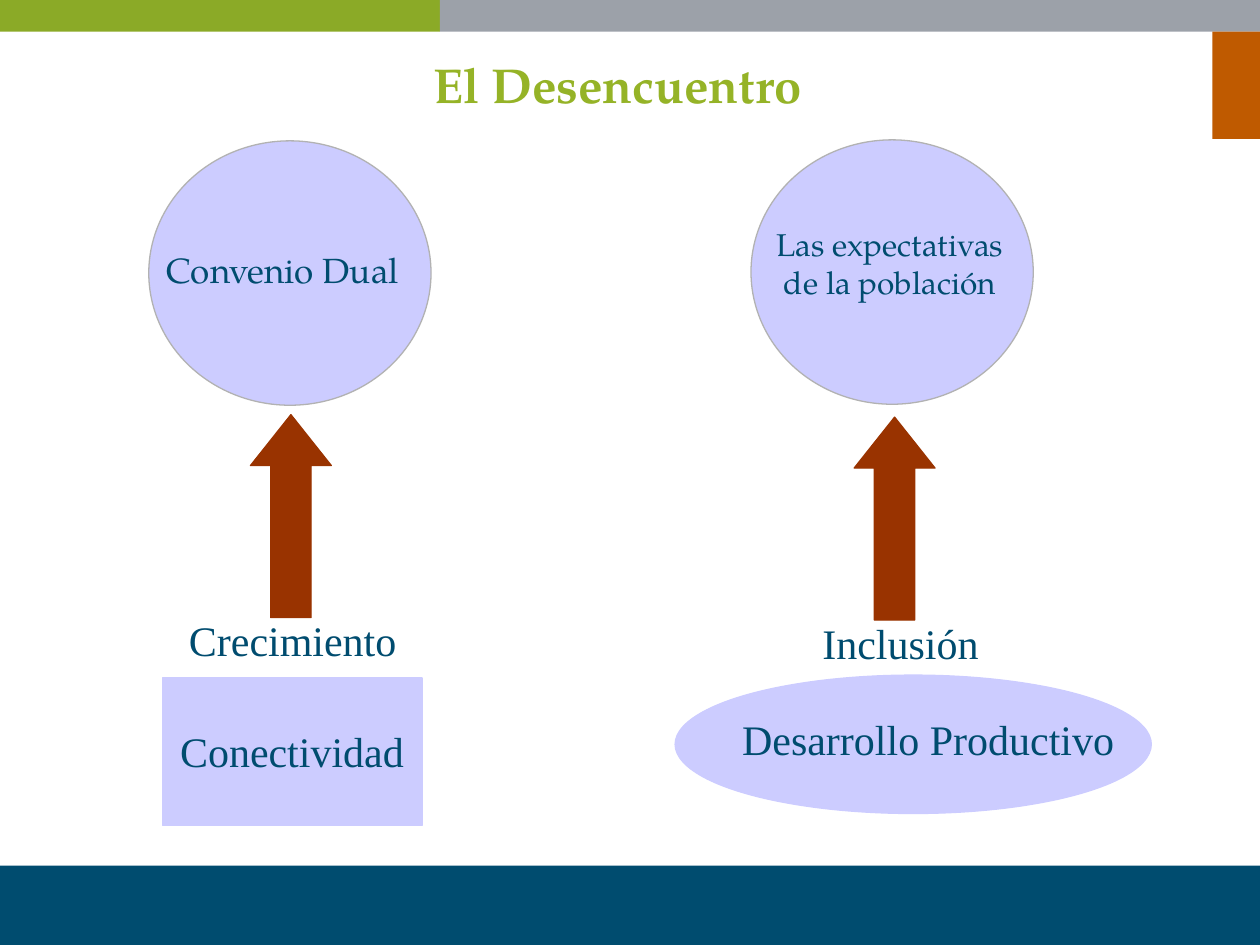
from pptx import Presentation
from pptx.dml.color import RGBColor
from pptx.enum import shapes as sh, text as t
from pptx.util import Cm, Pt

GREEN = RGBColor(0x8B, 0xAA, 0x27)
TITLE_GREEN = RGBColor(0x95, 0xB3, 0x27)
GREY = RGBColor(0x9C, 0xA1, 0xA9)
ORANGE = RGBColor(0xBF, 0x5A, 0x00)
NAVY = RGBColor(0x00, 0x4C, 0x6F)
LILAC = RGBColor(0xCC, 0xCC, 0xFF)
OUTLINE = RGBColor(0xB2, 0xB2, 0xB2)
BROWN = RGBColor(0x99, 0x33, 0x00)
SERIF = "TeX Gyre Pagella"
TIMES = "Times New Roman"
RECT = sh.MSO_SHAPE.RECTANGLE
OVAL = sh.MSO_SHAPE.OVAL
LEFT, CENTER = t.PP_ALIGN.LEFT, t.PP_ALIGN.CENTER


def add_shape(parent, kind, box, fill, line=None):
    sp = parent.shapes.add_shape(kind, *map(Cm, box))
    sp.shadow.inherit = False
    sp.fill.solid()
    sp.fill.fore_color.rgb = fill
    if line is None:
        sp.line.fill.background()
    else:
        sp.line.color.rgb = line
        sp.line.width = Pt(0.75)
    return sp


def write(sp, lines, font, size, color=NAVY, align=LEFT, wrap=True, bold=False):
    tf = sp.text_frame
    tf.text = "\n".join(lines)
    tf.word_wrap = wrap
    tf.auto_size = t.MSO_AUTO_SIZE.SHAPE_TO_FIT_TEXT
    tf.vertical_anchor = t.MSO_ANCHOR.TOP
    for p in tf.paragraphs:
        p.alignment = align
        p.font.name = font
        p.font.size = Pt(size)
        p.font.bold = bold
        p.font.color.rgb = color


def add_text(parent, box, lines, font=TIMES, size=24, **style):
    write(parent.shapes.add_textbox(*map(Cm, box)), lines, font, size, **style)


def add_title(s, title):
    sp = s.shapes.title
    sp.left, sp.top, sp.width, sp.height = Cm(5.64), Cm(0.97), Cm(13.61), Cm(1.45)
    write(sp, [title], SERIF, 28, color=TITLE_GREEN, align=CENTER, bold=True)


def add_labelled(s, kind, box, line, text_box, lines, **style):
    """Group a lilac shape with the text laid over it."""
    group = s.shapes.add_group_shape()
    add_shape(group, kind, box, LILAC, line)
    add_text(group, text_box, lines, **style)


def add_arrow(s, left, top):
    sp = add_shape(s, sh.MSO_SHAPE.UP_ARROW, (left, top, 1.63, 4.09), BROWN, BROWN)
    sp.adjustments[0] = 0.5
    sp.adjustments[1] = 0.63


def main():
    prs = Presentation()
    prs.slide_width, prs.slide_height = Cm(25.4), Cm(19.05)
    s = prs.slides.add_slide(prs.slide_layouts[5])

    for box, fill in [
        ((0, 17.45, 25.4, 1.6), NAVY),
        ((0, 0, 8.87, 0.64), GREEN),
        ((8.87, 0, 16.53, 0.64), GREY),
        ((24.44, 0.64, 0.96, 2.16), ORANGE),
    ]:
        add_shape(s, RECT, box, fill)
    add_title(s, "El Desencuentro")

    add_labelled(s, OVAL, (3, 2.84, 5.69, 5.33), OUTLINE,
                 (3.1, 4.88, 5.38, 1.09), ["Convenio Dual"], font=SERIF, size=20)
    add_labelled(s, OVAL, (15.14, 2.82, 5.69, 5.33), OUTLINE,
                 (14.17, 4.42, 7.7, 1.78), ["Las expectativas ", "de la población "],
                 font=SERIF, size=18, align=CENTER)

    add_arrow(s, 5.05, 8.36)
    add_arrow(s, 17.22, 8.41)
    add_text(s, (3.56, 12.27, 4.7, 1.27), ["Crecimiento"], wrap=False)
    add_text(s, (16.33, 12.32, 3.66, 1.27), ["Inclusión"], wrap=False)

    add_labelled(s, RECT, (3.28, 13.67, 5.23, 2.97), LILAC,
                 (3.38, 14.5, 5.03, 1.27), ["Conectividad"], wrap=False)
    add_labelled(s, OVAL, (13.61, 13.61, 9.6, 2.79), LILAC,
                 (14.71, 14.25, 8, 1.27), ["Desarrollo Productivo"], wrap=False)

    prs.save("out.pptx")


if __name__ == "__main__":
    main()
